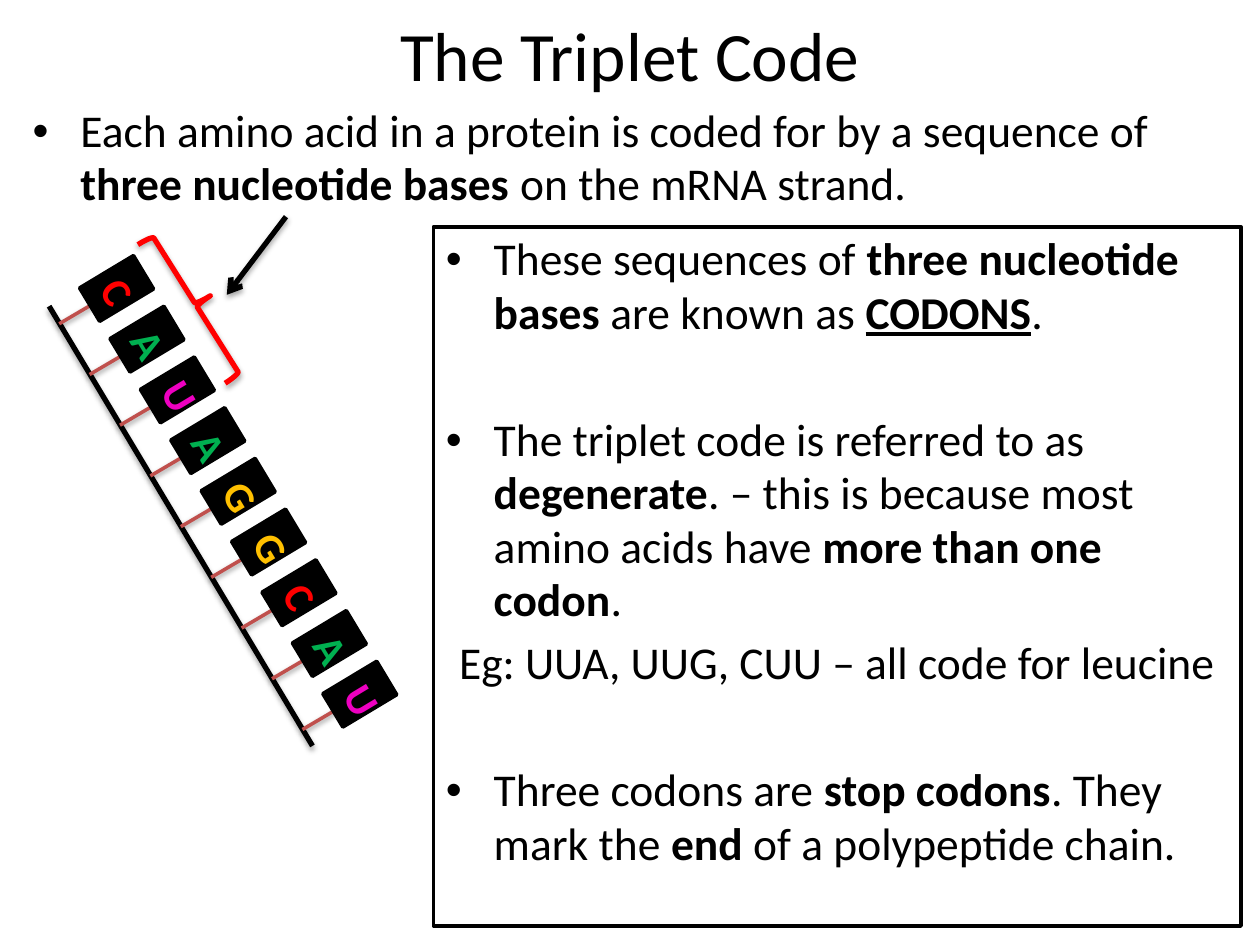
from lxml import etree
from pptx import Presentation
from pptx import util as u
from pptx.dml.color import RGBColor
from pptx.enum import shapes, text
from pptx.oxml.ns import qn

COLOURS = {"black": "000000", "white": "FFFFFF", "rung": "C0504D", "brace": "FF0000",
           "C": "FF0000", "A": "00B050", "U": "EE00C1", "G": "FFC000"}
BASES = "CAUAGGCAU"
STEP = (2.413, 4.025)
COLUMNS, ROWS = 100, 75
LEFT, CENTRE = text.PP_ALIGN.LEFT, text.PP_ALIGN.CENTER
RECT, BRACE = shapes.MSO_SHAPE.RECTANGLE, shapes.MSO_SHAPE.RIGHT_BRACE

INTRO = [(LEFT, True, 0, [("Each amino acid in a protein is coded for by a sequence of ", ""),
                          ("three nucleotide bases ", "b"), ("on the mRNA strand.", "")])]
NOTES = [
    (LEFT, True, 0, [("These sequences of ", ""), ("three nucleotide bases ", "b"),
                     ("are known as ", ""), ("CODONS", "bu"), (".", "")]),
    (LEFT, True, 42, [("The triplet code is referred to as ", ""), ("degenerate", "b"),
                      (". – this is because most amino acids have ", ""),
                      ("more than one codon", "b"), (".", "")]),
    (CENTRE, False, 5.5, [("Eg: UUA, UUG, CUU – all code for leucine", "")]),
    (LEFT, True, 42, [("Three codons are ", ""), ("stop codons", "b"), (". They mark the ", ""),
                      ("end ", "b"), ("of a polypeptide chain.", "")]),
]


class Deck:
    """Holds the style and current slide, and draws on a 100 by 75 grid."""

    def __init__(self):
        self.prs = Presentation()
        self.prs.slide_width, self.prs.slide_height = u.Inches(10), u.Inches(7.5)
        self.s = self.prs.slides.add_slide(self.prs.slide_layouts[6])
        self.font, self.size = "Calibri", 26

    def grid(self, *cells):
        units = (self.prs.slide_width / COLUMNS, self.prs.slide_height / ROWS)
        return [u.Emu(round(cell * units[i % 2])) for i, cell in enumerate(cells)]

    def colour(self, name):
        return RGBColor.from_string(COLOURS[name])

    def style(self, font, size, colour="black", bold=False, underline=False):
        font.name, font.size, font.bold, font.underline = self.font, u.Pt(size), bold, underline
        font.color.rgb = self.colour(colour)

    def outline(self, sp, colour, width):
        sp.line.color.rgb, sp.line.width = self.colour(colour), u.Pt(width)

    def shadow(self, sp, alpha=35, distance=23000):
        pr = sp._element.spPr
        effects = pr.find(qn("a:effectLst"))
        if effects is None:
            effects = etree.SubElement(pr, qn("a:effectLst"))
        outer = etree.SubElement(effects, qn("a:outerShdw"), blurRad="40000",
                                 dist=str(distance), dir="5400000", rotWithShape="0")
        black = etree.SubElement(outer, qn("a:srgbClr"), val=COLOURS["black"])
        etree.SubElement(black, qn("a:alpha"), val=str(alpha * 1000))

    def line(self, parent, ends, colour="black", width=3, arrow=False, **shadow):
        sp = parent.add_connector(shapes.MSO_CONNECTOR.STRAIGHT, *self.grid(*ends))
        self.outline(sp, colour, width)
        if arrow:
            etree.SubElement(sp._element.spPr.find(qn("a:ln")), qn("a:tailEnd"), type="arrow")
        self.shadow(sp, **shadow)

    def shape(self, parent, kind, box, fill, line, width=2, rotation=0):
        sp = parent.add_shape(kind, *self.grid(*box))
        sp.shadow.inherit, sp.rotation = False, rotation
        if fill:
            sp.fill.solid()
            sp.fill.fore_color.rgb = self.colour(fill)
        else:
            sp.fill.background()
        self.outline(sp, line, width)
        return sp

    def label(self, sp, words, size, colour="black", bold=False):
        tf = sp.text_frame
        tf.word_wrap, tf.vertical_anchor = True, text.MSO_ANCHOR.MIDDLE
        tf.text = words
        p = tf.paragraphs[0]
        p.alignment = CENTRE
        self.style(p.runs[0].font, size, colour, bold)

    def textbox(self, box):
        return self.s.shapes.add_textbox(*self.grid(*box))

    def body(self, sp, paragraphs):
        tf = sp.text_frame
        tf.word_wrap, tf.vertical_anchor = True, text.MSO_ANCHOR.TOP
        for i, (align, bullet, before, runs) in enumerate(paragraphs):
            p = tf.add_paragraph() if i else tf.paragraphs[0]
            pr = p._p.get_or_add_pPr()
            pr.set("marL", str(u.Inches(0.38)))
            pr.set("indent", str(u.Inches(-0.38)))
            if bullet:
                etree.SubElement(pr, qn("a:buFont"), typeface="Arial")
                etree.SubElement(pr, qn("a:buChar"), char="•")
            p.alignment, p.line_spacing, p.space_before = align, 0.98, u.Pt(before)
            for words, marks in runs:
                r = p.add_run()
                r.text = words
                self.style(r.font, self.size, bold="b" in marks, underline="u" in marks)

    def strand(self):
        group = self.s.shapes.add_group_shape().shapes
        self.line(group, (3.9, 24.3, 24.8, 59.2))
        offsets = [(i * STEP[0], i * STEP[1]) for i in range(len(BASES))]
        for x, y in offsets:
            self.line(group, (4.7 + x, 25.7 + y, 8.1 + x, 23.7 + y), "rung", 2,
                      alpha=38, distance=20000)
        for base, (x, y) in zip(BASES, offsets):
            sp = self.shape(group, RECT, (7.7 + x, 20.4 + y, 3.1, 5), "black", "black", rotation=59)
            self.label(sp, base, 24, base, True)


def main():
    deck = Deck()
    deck.label(deck.textbox((5, 2.3, 90, 3.9)), "The Triplet Code", 39.6)
    deck.body(deck.textbox((1.6, 7.8, 96.9, 65.6)), INTRO)
    deck.strand()
    top = deck.s.shapes
    deck.shadow(deck.shape(top, BRACE, (14.2, 17.7, 2.7, 13), None, "brace", 3, 327.8))
    deck.line(top, (22.7, 17.2, 18, 23.4), arrow=True)
    deck.body(deck.shape(top, RECT, (34.4, 18, 64.1, 55.5), "white", "black"), NOTES)
    deck.prs.save("out.pptx")


if __name__ == "__main__":
    main()
